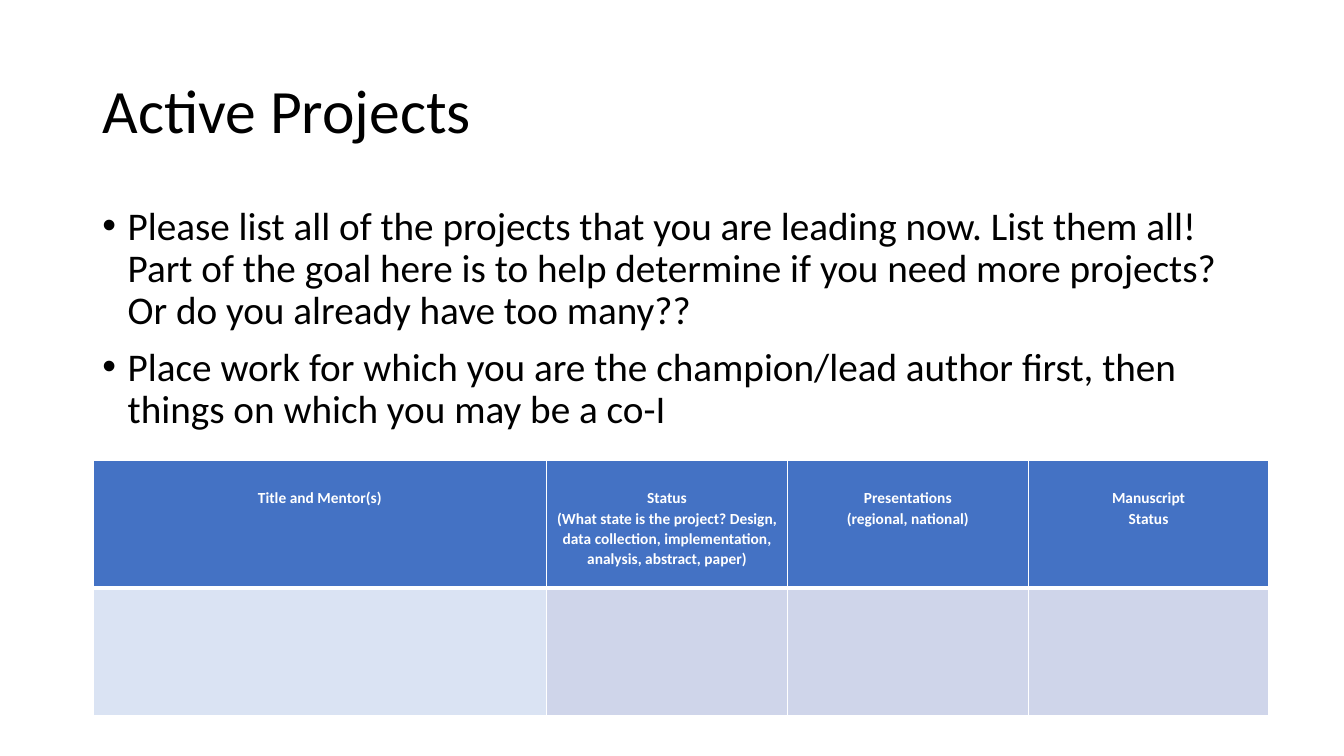
"""Build the Active Projects slide with its prompts and project table."""
from lxml.etree import SubElement
from pptx import Presentation
from pptx.dml.color import RGBColor
from pptx.enum.text import MSO_ANCHOR, MSO_AUTO_SIZE, PP_ALIGN
from pptx.oxml.ns import qn
from pptx.util import Pt


def style(p, size, color, spacing, align=PP_ALIGN.LEFT, bold=False):
    p.alignment = align
    p.line_spacing = spacing
    for r in p.runs:
        r.font.name = "Calibri"
        r.font.size = Pt(size)
        r.font.bold = bold
        r.font.color.rgb = RGBColor.from_string(color)


def border(cell, side, width, color):
    ln = SubElement(cell._tc.get_or_add_tcPr(), qn(f"a:ln{side}"), w=str(Pt(width)))
    fill = SubElement(ln, qn("a:solidFill"))
    SubElement(fill, qn("a:srgbClr"), val=color)


prs = Presentation()
prs.slide_width, prs.slide_height = Pt(960), Pt(540)
s = prs.slides.add_slide(prs.slide_layouts[1])

title, body = s.placeholders
title.left, title.top, title.width, title.height = Pt(66), Pt(28.75), Pt(828), Pt(104.4)
body.left, body.top, body.width, body.height = Pt(66), Pt(143.75), Pt(828), Pt(171.5)

tf = title.text_frame
tf.text = "Active Projects"
tf.auto_size = MSO_AUTO_SIZE.NONE
tf.vertical_anchor = MSO_ANCHOR.MIDDLE
style(tf.paragraphs[0], 44, "000000", 0.9)

prompts = [
    "Please list all of the projects that you are leading now. List them all! "
    "Part of the goal here is to help determine if you need more projects? "
    "Or do you already have too many??",
    "Place work for which you are the champion/lead author first, "
    "then things on which you may be a co-I",
]
tf = body.text_frame
tf.text = "\n".join(prompts)
tf.auto_size = MSO_AUTO_SIZE.NONE
for p in tf.paragraphs:
    style(p, 28, "000000", 0.9)
    p.space_before = Pt(10)
    pPr = p._p.get_or_add_pPr()
    pPr.set("marL", str(Pt(18)))
    pPr.set("indent", str(-Pt(18)))

headers = [
    "Title and Mentor(s)",
    "Status\n(What state is the project? Design, data collection, "
    "implementation, analysis, abstract, paper)",
    "Presentations\n(regional, national)",
    "Manuscript\nStatus",
]
widths = [324, 172, 172, 172]
row_h = 91
table = s.shapes.add_table(2, 4, Pt(66.5), Pt(329), Pt(sum(widths)), Pt(2 * row_h)).table
for row in table.rows:
    row.height = Pt(row_h)
for col, (header, width) in enumerate(zip(headers, widths)):
    table.columns[col].width = Pt(width)
    body_fill = "DAE3F3" if col == 0 else "CFD5EA"
    for row, (text, color) in enumerate([(header, "4472C4"), ("", body_fill)]):
        cell = table.cell(row, col)
        line_widths = {"L": 1, "R": 1, "T": 3 if row else 1, "B": 1 if row else 3}
        for side, line_width in line_widths.items():
            border(cell, side, line_width, "FFFFFF")
        cell.fill.solid()
        cell.fill.fore_color.rgb = RGBColor.from_string(color)
        cell.margin_left = cell.margin_right = cell.margin_bottom = Pt(5)
        cell.margin_top = Pt(19.5)
        cell.text_frame.text = text
        for p in cell.text_frame.paragraphs:
            style(p, 11, "FFFFFF", 1.07, PP_ALIGN.CENTER, True)

prs.save("out.pptx")
